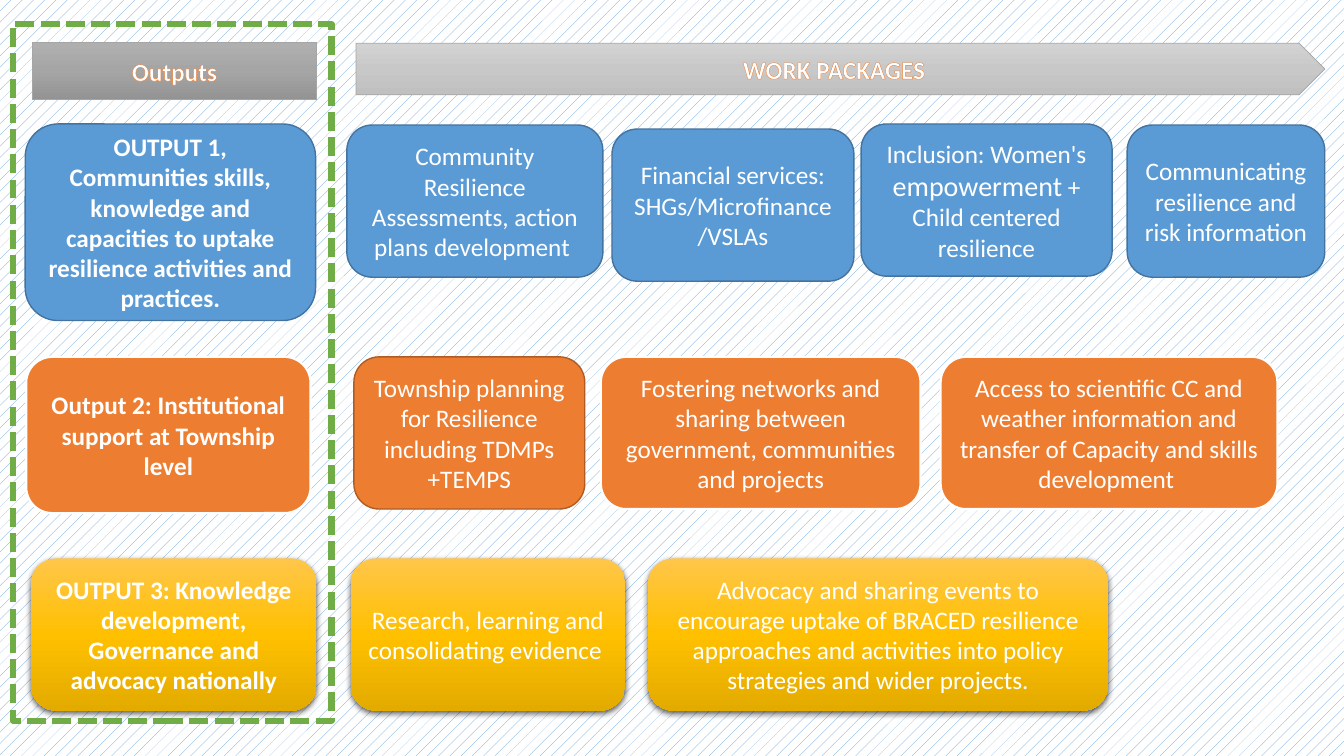
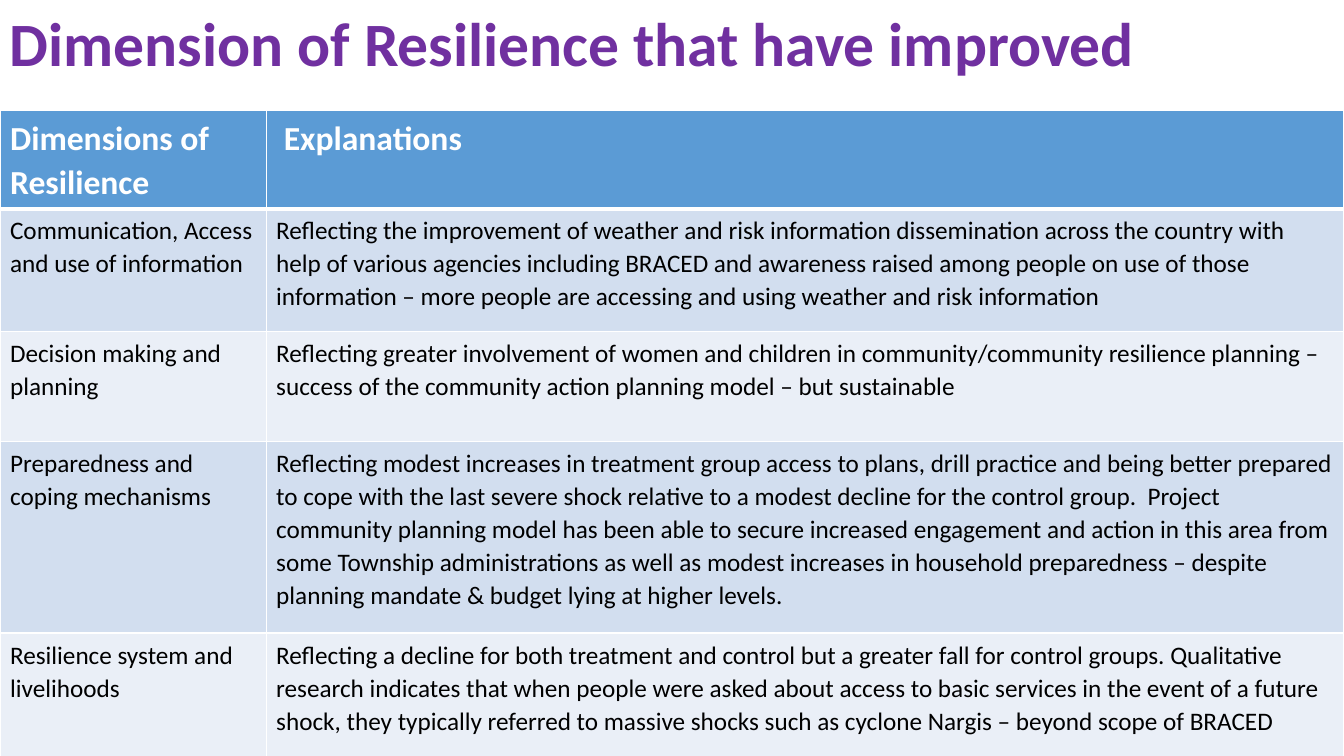
from lxml import etree
from pptx import Presentation
from pptx.dml.color import RGBColor
from pptx.enum.dml import MSO_LINE, MSO_PATTERN
from pptx.enum.shapes import MSO_SHAPE
from pptx.enum.text import MSO_ANCHOR, MSO_AUTO_SIZE, PP_ALIGN
from pptx.oxml.ns import qn
from pptx.util import Emu, Inches, Pt

RECT, ROUND, ARROW = MSO_SHAPE.RECTANGLE, MSO_SHAPE.ROUNDED_RECTANGLE, MSO_SHAPE.PENTAGON
DASH, DOTS = MSO_LINE.SQUARE_DOT, MSO_PATTERN.PERCENT_10
CENTER, MIDDLE, GROW = PP_ALIGN.CENTER, MSO_ANCHOR.MIDDLE, MSO_AUTO_SIZE.SHAPE_TO_FIT_TEXT

# Shared look
WIDE, HIGH = 13.33, 7.5
FONT = "Calibri"
WHITE, BLACK, BLUE, ORANGE = "FFFFFF", "000000", "5B9BD5", "ED7D31"
GREEN, PURPLE, GRAY = "70AD47", "7030A0", "A5A5A5"
BANDS = ("D2DEEF", "EAEFF7")
GOLD = ("FFC64B", "FFC000", "E3AB00")
SILVER = ("D2D2D2", "C8C8C8", "C0C0C0")
STEEL = ("AFAFAF", "A5A5A5", "939393")

# Each row of the plan: top, fill, edge, then (text, left, drop, width, height[, edge])
BOX = 1.51
PLAN = [
    (1.23, BLUE, ("43739E", 1), [
        ("OUTPUT 1, Communities skills, knowledge and capacities to uptake "
         "resilience activities and practices.", 0.25, 0, 2.88, 1.95),
        ("Community Resilience Assessments, action plans development ",
         3.44, 0.01, 2.54, BOX),
        ("Financial services: SHGs/Microfinance/VSLAs", 6.07, 0.05, 2.4, BOX),
        ([("Inclusion: Women's ", 18), ("empowerment", 20),
          (" + Child centered resilience", 18)], 8.54, 0, 2.49, BOX),
        ("Communicating resilience and risk information ", 11.18, 0.01, 1.96, BOX),
    ]),
    (3.54, ORANGE, (WHITE, 1.5), [
        ("Output 2: Institutional support at Township level", 0.26, 0, 2.82, 1.55),
        ("Township planning for Resilience including TDMPs +TEMPS",
         3.51, 0, 2.29, BOX, ("AF5C24", 1)),
        ("Fostering networks and sharing between government, communities "
         "and projects", 5.96, 0, 3.17, BOX),
        ("Access to scientific CC and weather information and transfer of "
         "Capacity and skills development ", 9.33, 0, 3.34, BOX),
    ]),
    (5.54, GOLD, None, [
        ("OUTPUT 3: Knowledge development, Governance and advocacy nationally",
         0.31, 0, 2.83, BOX),
        ("Research, learning and consolidating evidence ", 3.48, 0, 2.72, BOX),
        ("Advocacy and sharing events to encourage uptake of BRACED resilience "
         "approaches and activities into policy strategies and wider projects.",
         6.43, 0, 4.56, BOX),
    ]),
]

COLS = (2.64, 10.69)
ROWS = (0.92, 1.22, 1.09, 1.9, 1.56)
CELLS = [
    ("Dimensions of Resilience", " Explanations"),
    ("Communication, Access and use of information",
     "Reflecting the improvement of weather and risk information dissemination "
     "across the country with help of various agencies including BRACED and "
     "awareness raised among people on use of those information – more people "
     "are accessing and using weather and risk information"),
    ("Decision making and planning",
     "Reflecting greater involvement of women and children in "
     "community/community resilience planning – success of the community "
     "action planning model – but sustainable"),
    ("Preparedness and coping mechanisms",
     "Reflecting modest increases in treatment group access to plans, drill "
     "practice and being better prepared to cope with the last severe shock "
     "relative to a modest decline for the control group.  Project community "
     "planning model has been able to secure increased engagement and action in "
     "this area from some Township administrations as well as modest increases "
     "in household preparedness – despite planning mandate & budget lying at "
     "higher levels."),
    ("Resilience system and livelihoods",
     "Reflecting a decline for both treatment and control but a greater fall "
     "for control groups. Qualitative research indicates that when people were "
     "asked about access to basic services in the event of a future shock, they "
     "typically referred to massive shocks such as cyclone Nargis – beyond "
     "scope of BRACED"),
]


def rgb(code):
    return RGBColor.from_string(code)


def inches(box):
    return [Inches(n) for n in box]


def node(parent, tag, **attrs):
    return etree.SubElement(parent, qn(tag), {k: str(v) for k, v in attrs.items()})


def write(para, text, size, color, bold=False):
    """Fill a paragraph with a string or a list of (text, size) runs."""
    parts = [(text, size)] if isinstance(text, str) else text
    para.text = parts[0][0]
    for more, _ in parts[1:]:
        para.add_run().text = more
    for run, (_, points) in zip(para.runs, parts):
        font = run.font
        font.name, font.size, font.bold = FONT, Pt(points), bold
        font.color.rgb = rgb(color)


def paint(shape, fill):
    """No fill, one colour, or an even gradient from top to bottom."""
    if fill is None:
        shape.fill.background()
    elif isinstance(fill, str):
        shape.fill.solid()
        shape.fill.fore_color.rgb = rgb(fill)
    else:
        shape.fill.gradient()
        shape.fill.gradient_angle = 270
        stops = shape._element.spPr.find(".//" + qn("a:gsLst"))
        for old in list(stops):
            stops.remove(old)
        for i, code in enumerate(fill):
            stop = node(stops, "a:gs", pos=i * 100000 // (len(fill) - 1))
            node(stop, "a:srgbClr", val=code)


def block(slide, kind, box, fill, edge, text=None, bold=False):
    shape = slide.shapes.add_shape(kind, *inches(box))
    shape.shadow.inherit = False
    paint(shape, fill)
    if edge:
        shape.line.color.rgb, shape.line.width = rgb(edge[0]), Pt(edge[1])
    else:
        shape.line.fill.background()
    if text:
        frame = shape.text_frame
        frame.word_wrap, frame.vertical_anchor = True, MIDDLE
        para = frame.paragraphs[0]
        para.alignment = CENTER
        write(para, text, 18, WHITE, bold)
    return shape


def shade(shape):
    """Soft shadow just below the shape."""
    effects = shape._element.spPr.find(qn("a:effectLst"))
    drop = node(effects, "a:outerShdw", blurRad=Pt(4.5), dist=Pt(1.5),
                dir=5400000, algn="ctr", rotWithShape=0)
    node(node(drop, "a:srgbClr", val=BLACK), "a:alpha", val=63000)


def banner(slide, kind, box, fill, text):
    """Heading whose letters have a thin orange outline."""
    shape = block(slide, kind, box, fill, (GRAY, 0.5), text, True)
    props = shape.text_frame.paragraphs[0].runs[0].font._element
    line = node(props, "a:ln", w=Pt(0.52))
    node(node(line, "a:solidFill"), "a:srgbClr", val=ORANGE)
    props.insert(0, line)


def plan_row(slide, top, fill, edge, items):
    """One output, in bold, followed by its work packages."""
    for i, (text, left, drop, width, height, *own) in enumerate(items):
        shape = block(slide, ROUND, (left, top + drop, width, height), fill,
                      own[0] if own else edge, text, i == 0)
        if edge is None:
            shade(shape)


def plan_slide(slide):
    back = slide.background.fill
    back.patterned()
    back.pattern = DOTS
    back.fore_color.rgb, back.back_color.rgb = rgb(BLUE), rgb(WHITE)
    # Dashed frame around the outputs
    frame = block(slide, RECT, (0.13, 0.24, 3.16, 6.91), None, (GREEN, 4.5))
    frame.line.dash_style = DASH
    for row in PLAN:
        plan_row(slide, *row)
    # Headings
    banner(slide, ARROW, (3.53, 0.43, 9.61, 0.51), SILVER, "WORK PACKAGES")
    banner(slide, RECT, (0.32, 0.42, 2.82, 0.57), STEEL, "Outputs")


def borders(cell, widths):
    props = cell._tc.get_or_add_tcPr()
    for i, (side, width) in enumerate(zip("LRTB", widths)):
        line = node(props, "a:ln" + side, w=Pt(width))
        node(node(line, "a:solidFill"), "a:srgbClr", val=WHITE)
        props.insert(i, line)


def grid(slide, left, top):
    box = inches((left, top, sum(COLS), sum(ROWS)))
    table = slide.shapes.add_table(len(ROWS), len(COLS), *box).table
    for col, width in zip(table.columns, COLS):
        col.width = Inches(width)
    for r, (row, height) in enumerate(zip(table.rows, ROWS)):
        row.height = Inches(height)
        head = r == 0
        for cell, text in zip(row.cells, CELLS[r]):
            cell.fill.solid()
            cell.fill.fore_color.rgb = rgb(BLUE if head else BANDS[(r - 1) % 2])
            borders(cell, (1, 1, 3 if r == 1 else 1, 3 if head else 1))
            para = cell.text_frame.paragraphs[0]
            para.line_spacing, para.space_after = 1.07, Pt(8)
            write(para, text, 24 if head else 18, WHITE if head else BLACK, head)


def title(slide, box, text):
    frame = slide.shapes.add_textbox(*inches(box)).text_frame
    frame.word_wrap, frame.auto_size = True, GROW
    write(frame.paragraphs[0], text, 44, PURPLE, True)


def table_slide(slide):
    back = slide.background.fill
    back.solid()
    back.fore_color.rgb = rgb(WHITE)
    grid(slide, 0, 1.1)
    title(slide, (0, 0, WIDE, 0.84), "Dimension of Resilience that have improved")


def main():
    deck = Presentation()
    deck.slide_width, deck.slide_height = Emu(Inches(WIDE)), Emu(Inches(HIGH))
    for build in (plan_slide, table_slide):
        build(deck.slides.add_slide(deck.slide_layouts[6]))
    deck.save("out.pptx")


if __name__ == "__main__":
    main()
